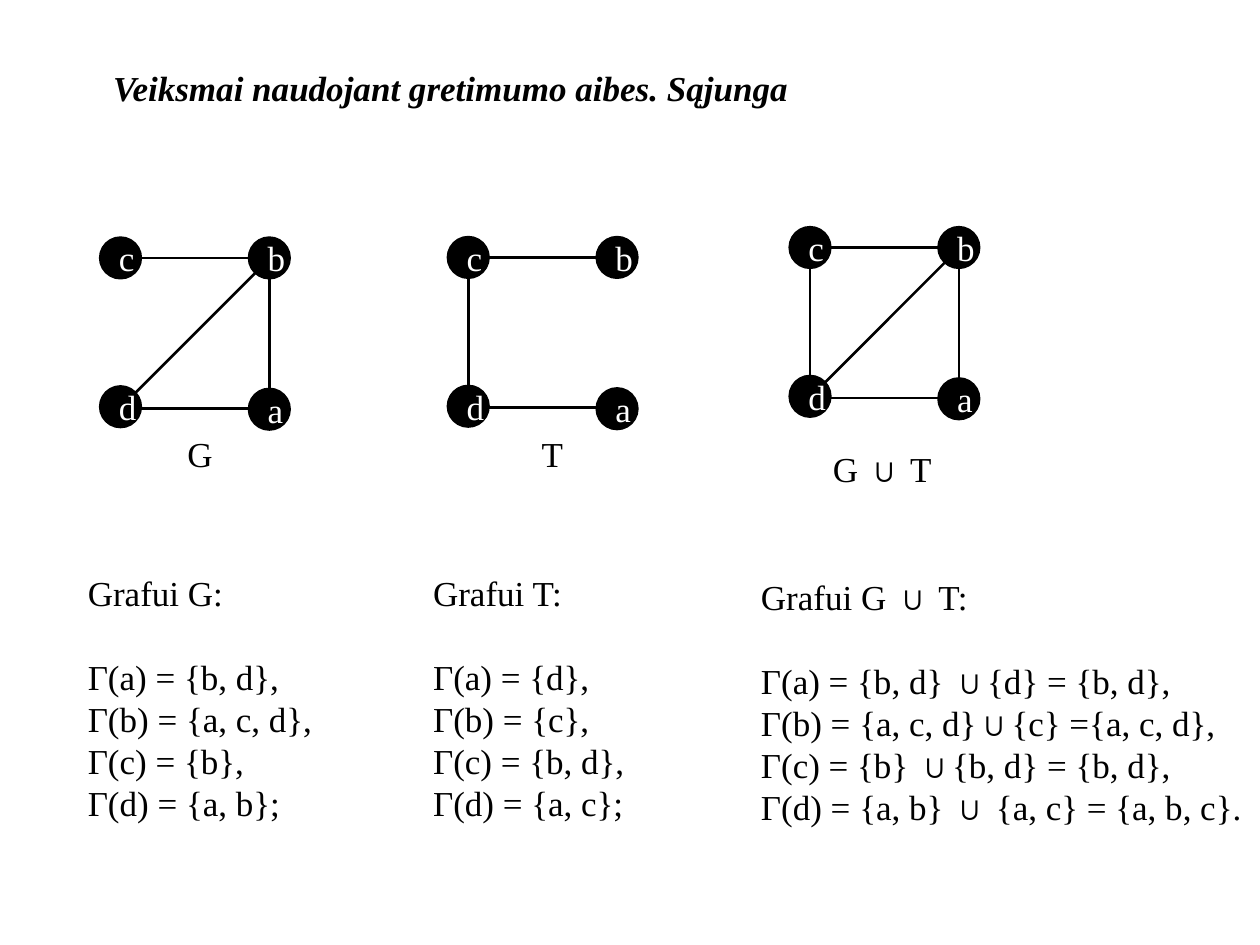
from lxml import etree
from pptx import Presentation
from pptx import util as u
from pptx.dml.color import RGBColor
from pptx.enum import shapes, text
from pptx.oxml.ns import qn

BLACK = RGBColor(0, 0, 0)
WHITE = RGBColor(255, 255, 255)
FONT = "Times New Roman"

# Vertex layout inside a graph, in cm from its top left corner
SIZE = 0.8
NODES = {"c": (0, 0), "b": (3, 0), "d": (0, 3), "a": (3, 3.05)}
EDGES = {
    "cb": (0.8, 0.4, 3, 0.4),
    "da": (0.8, 3.43, 3, 3.43),
    "ba": (3.4, 0.8, 3.4, 3.05),
    "cd": (0.4, 0.8, 0.4, 3),
    "bd": (3.13, 0.69, 0.69, 3.13),
}

# Graph origin, edges, label, label box (left, top, width)
GRAPHS = [
    (2.03, 4.8, ["cb", "da", "ba", "bd"], "G", (3.53, 8.59, 0.95)),
    (9.04, 4.79, ["cb", "cd", "da"], "T", (10.67, 8.59, 0.95)),
    (15.93, 4.59, ["cb", "da", "cd", "ba", "bd"], "G ∪ T", (16.54, 8.89, 2.87)),
]

# Adjacency sets: left, top, width, heading, lines
SETS = [
    (1.52, 11.4, 5.36, "Grafui G:",
     ["Γ(a) = {b, d},", "Γ(b) = {a, c, d},", "Γ(c) = {b},", "Γ(d) = {a, b};"]),
    (8.48, 11.4, 5.36, "Grafui T:",
     ["Γ(a) = {d},", "Γ(b) = {c},", "Γ(c) = {b, d},", "Γ(d) = {a, c};"]),
    (15.09, 11.48, 10.31, "Grafui G ∪ T:",
     ["Γ(a) = {b, d} ∪{d} = {b, d},", "Γ(b) = {a, c, d}∪{c} ={a, c, d},",
      "Γ(c) = {b} ∪{b, d} = {b, d},", "Γ(d) = {a, b} ∪ {a, c} = {a, b, c}."]),
]


def add_run(p, words, color=BLACK, emphasis=None):
    p.line_spacing = u.Pt(24)
    r = p.add_run()
    r.text = words
    r.font.name = FONT
    r.font.size = u.Pt(20)
    r.font.bold = r.font.italic = emphasis
    r.font.color.rgb = color


def add_text(parent, left, top, width, height, lines, emphasis=None):
    box = parent.add_textbox(u.Cm(left), u.Cm(top), u.Cm(width), u.Cm(height))
    tf = box.text_frame
    tf.word_wrap = True
    for i, line in enumerate(lines):
        p = tf.add_paragraph() if i else tf.paragraphs[0]
        add_run(p, line, emphasis=emphasis)
    return tf


def add_node(parent, left, top, name):
    sp = parent.add_shape(shapes.MSO_SHAPE.OVAL, u.Cm(left), u.Cm(top),
                          u.Cm(SIZE), u.Cm(SIZE))
    sp.shadow.inherit = False
    sp.fill.solid()
    sp.fill.fore_color.rgb = BLACK
    sp.line.color.rgb = BLACK
    sp.line.width = u.Pt(2)
    tf = sp.text_frame
    tf.word_wrap = True
    tf.vertical_anchor = text.MSO_ANCHOR.MIDDLE
    p = tf.paragraphs[0]
    p.alignment = text.PP_ALIGN.CENTER
    add_run(p, name, WHITE)


def add_edge(parent, x1, y1, x2, y2):
    line = parent.add_connector(shapes.MSO_CONNECTOR.STRAIGHT,
                                u.Cm(x1), u.Cm(y1), u.Cm(x2), u.Cm(y2))
    line.line.color.rgb = BLACK
    line.line.width = u.Pt(1.5)
    etree.SubElement(line._element.spPr, qn("a:effectLst"))


def add_graph(s, left, top, edges, label, label_box):
    group = s.shapes.add_group_shape().shapes
    for name, (dx, dy) in NODES.items():
        add_node(group, left + dx, top + dy, name)
    for edge in edges:
        x1, y1, x2, y2 = EDGES[edge]
        add_edge(group, left + x1, top + y1, left + x2, top + y2)
    add_text(group, *label_box, 1.11, [label])


def add_sets(s, left, top, width, heading, lines):
    tf = add_text(s.shapes, left, top, width, 5.38, [heading, *lines])
    tf.paragraphs[0].space_after = u.Pt(24)


def main():
    prs = Presentation()
    prs.slide_width, prs.slide_height = u.Cm(25.4), u.Cm(19.05)
    s = prs.slides.add_slide(prs.slide_layouts[6])

    # Title
    add_text(s.shapes, 2.03, 1.22, 22.28, 1.11,
             ["Veiksmai naudojant gretimumo aibes. Sąjunga"], emphasis=True)

    # Graphs above, their adjacency sets below
    for graph in GRAPHS:
        add_graph(s, *graph)
    for block in SETS:
        add_sets(s, *block)

    prs.save("out.pptx")


if __name__ == "__main__":
    main()
